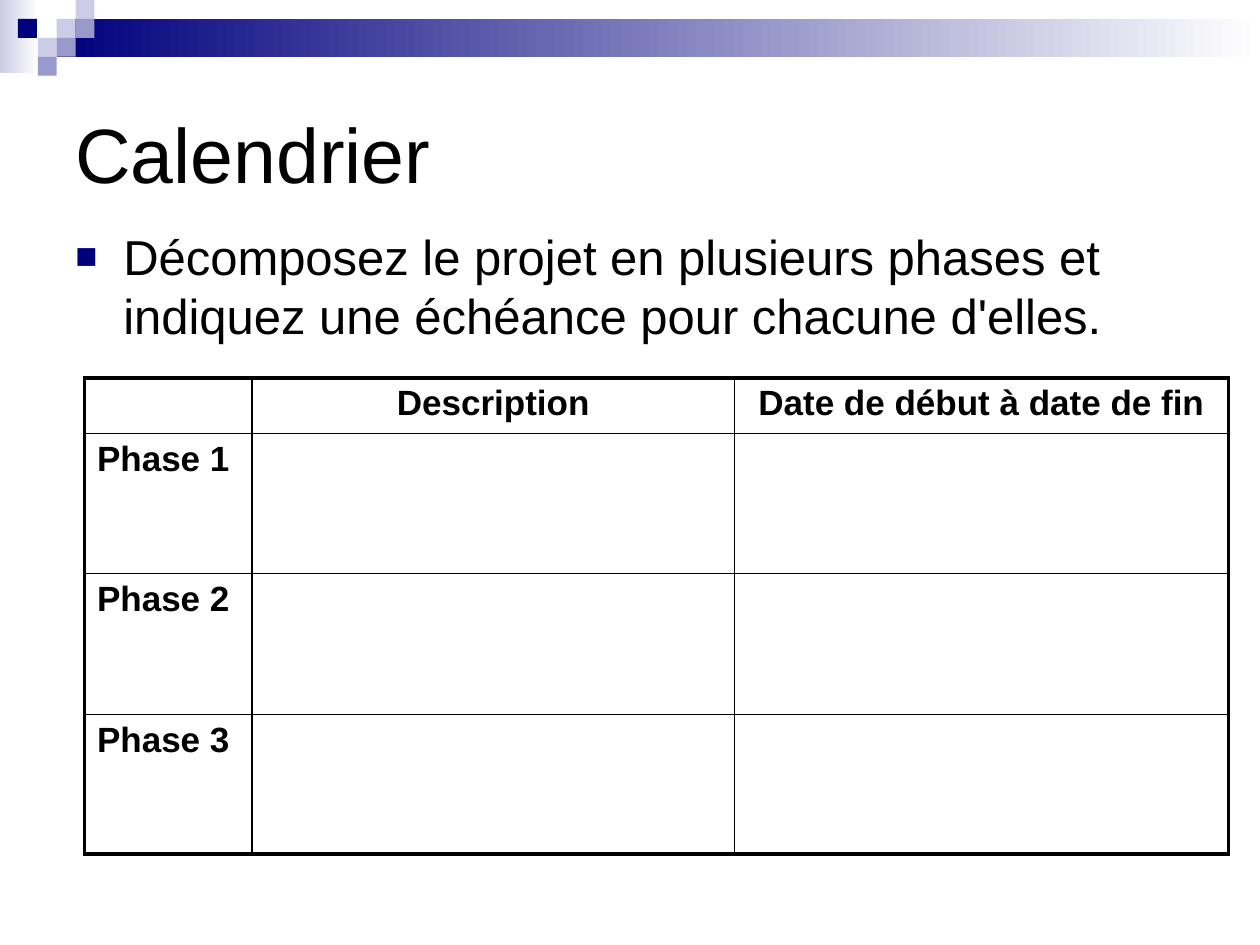
import dataclasses

import lxml.etree
import pptx
import pptx.dml.color
import pptx.enum.shapes
import pptx.enum.text
import pptx.oxml.ns
import pptx.util

Inches = pptx.util.Inches
Pt = pptx.util.Pt
Align = pptx.enum.text.PP_ALIGN
Anchor = pptx.enum.text.MSO_ANCHOR
qn = pptx.oxml.ns.qn

COLOURS = {
    "navy": "00007D",
    "violet": "9999CC",
    "lavender": "CCCCE6",
    "white": "FFFFFF",
    "black": "000000",
}
FONT = "Arial"
TILE = 0.15
THIN, THICK = 1, 2.25


@dataclasses.dataclass
class Block:
    left: float
    top: float
    width: float
    height: float
    colour: str
    fades: bool = False


BANDS = [
    Block(0, 0, 0.31, 0.58, "lavender", True),
    Block(0.45, 0.15, 9.55, 0.3, "navy", True),
]
TILES = [
    Block(column * TILE, row * TILE, TILE, TILE, colour)
    for column, row, colour in [
        (3, 1, "lavender"),
        (4, 0, "lavender"),
        (4, 1, "violet"),
        (2, 2, "lavender"),
        (0.95, 1, "navy"),
        (3, 2, "violet"),
        (2, 3, "violet"),
    ]
]
COLUMN_WIDTHS = [1.33, 3.83, 3.92]
ROW_HEIGHTS = [0.44, 1.11, 1.12, 1.11]
TABLE_TEXT = [
    ["", "Description", "Date de début à date de fin"],
    ["Phase 1", "", ""],
    ["Phase 2", "", ""],
    ["Phase 3", "", ""],
]


def rgb(name: str) -> pptx.dml.color.RGBColor:
    return pptx.dml.color.RGBColor.from_string(COLOURS[name])


def add_block(slide, block: Block) -> None:
    shape = slide.shapes.add_shape(
        pptx.enum.shapes.MSO_SHAPE.RECTANGLE,
        Inches(block.left), Inches(block.top), Inches(block.width), Inches(block.height),
    )
    shape.shadow.inherit = False
    shape.line.fill.background()
    if block.fades:
        shape.fill.gradient()
        shape.fill.gradient_angle = 0
        for stop, colour in zip(shape.fill.gradient_stops, (block.colour, "white")):
            stop.color.rgb = rgb(colour)
    else:
        shape.fill.solid()
        shape.fill.fore_color.rgb = rgb(block.colour)


def write_text(frame, text: str, *, size: float, bold: bool = False,
               align=Align.LEFT, anchor=Anchor.TOP):
    frame.word_wrap = True
    frame.vertical_anchor = anchor
    paragraph = frame.paragraphs[0]
    paragraph.alignment = align
    run = paragraph.add_run()
    run.text = text
    run.font.name = FONT
    run.font.size = Pt(size)
    run.font.bold = bold
    run.font.color.rgb = rgb("black")
    return paragraph


def add_bullet(paragraph, character: str, colour: str, percent: int, indent: float) -> None:
    properties = paragraph._p.get_or_add_pPr()
    properties.set("marL", str(Inches(indent)))
    properties.set("indent", str(-Inches(indent)))
    bullet_colour = lxml.etree.SubElement(properties, qn("a:buClr"))
    lxml.etree.SubElement(bullet_colour, qn("a:srgbClr"), val=COLOURS[colour])
    lxml.etree.SubElement(properties, qn("a:buSzPct"), val=str(percent * 1000))
    lxml.etree.SubElement(properties, qn("a:buFont"), typeface=FONT)
    lxml.etree.SubElement(properties, qn("a:buChar"), char=character)


def set_borders(cell, widths: dict[str, float]) -> None:
    properties = cell._tc.get_or_add_tcPr()
    for position, (side, width) in enumerate(widths.items()):
        line = lxml.etree.Element(qn(f"a:ln{side}"), w=str(Pt(width)))
        fill = lxml.etree.SubElement(line, qn("a:solidFill"))
        lxml.etree.SubElement(fill, qn("a:srgbClr"), val=COLOURS["black"])
        properties.insert(position, line)


def add_schedule(slide) -> None:
    table = slide.shapes.add_table(
        len(ROW_HEIGHTS), len(COLUMN_WIDTHS), Inches(0.67), Inches(3),
        Inches(sum(COLUMN_WIDTHS)), Inches(sum(ROW_HEIGHTS)),
    ).table
    table.horz_banding = False
    for column, width in zip(table.columns, COLUMN_WIDTHS):
        column.width = Inches(width)
    for row, height in zip(table.rows, ROW_HEIGHTS):
        row.height = Inches(height)
    last_row, last_column = len(ROW_HEIGHTS) - 1, len(COLUMN_WIDTHS) - 1
    for row, texts in enumerate(TABLE_TEXT):
        for column, text in enumerate(texts):
            cell = table.cell(row, column)
            cell.fill.background()
            outer = {"L": column == 0, "R": column == last_column,
                     "T": row == 0, "B": row == last_row}
            set_borders(cell, {side: THICK if edge else THIN for side, edge in outer.items()})
            if text:
                write_text(cell.text_frame, text, size=20, bold=True,
                           align=Align.CENTER if row == 0 else Align.LEFT)


def add_text_box(slide, left: float, top: float, width: float, height: float):
    return slide.shapes.add_textbox(
        Inches(left), Inches(top), Inches(width), Inches(height)
    ).text_frame


def main() -> None:
    presentation = pptx.Presentation()
    presentation.slide_width = Inches(10)
    presentation.slide_height = Inches(7.5)
    slide = presentation.slides.add_slide(presentation.slide_layouts[6])
    for block in BANDS + TILES:
        add_block(slide, block)
    write_text(add_text_box(slide, 0.5, 0.67, 9, 1.08), "Calendrier",
               size=44, anchor=Anchor.MIDDLE)
    instruction = write_text(
        add_text_box(slide, 0.5, 1.75, 8.92, 1.08),
        "Décomposez le projet en plusieurs phases et indiquez une échéance pour chacune d'elles.",
        size=28,
    )
    add_bullet(instruction, "■", "navy", 75, 0.38)
    add_schedule(slide)
    presentation.save("out.pptx")


if __name__ == "__main__":
    main()
